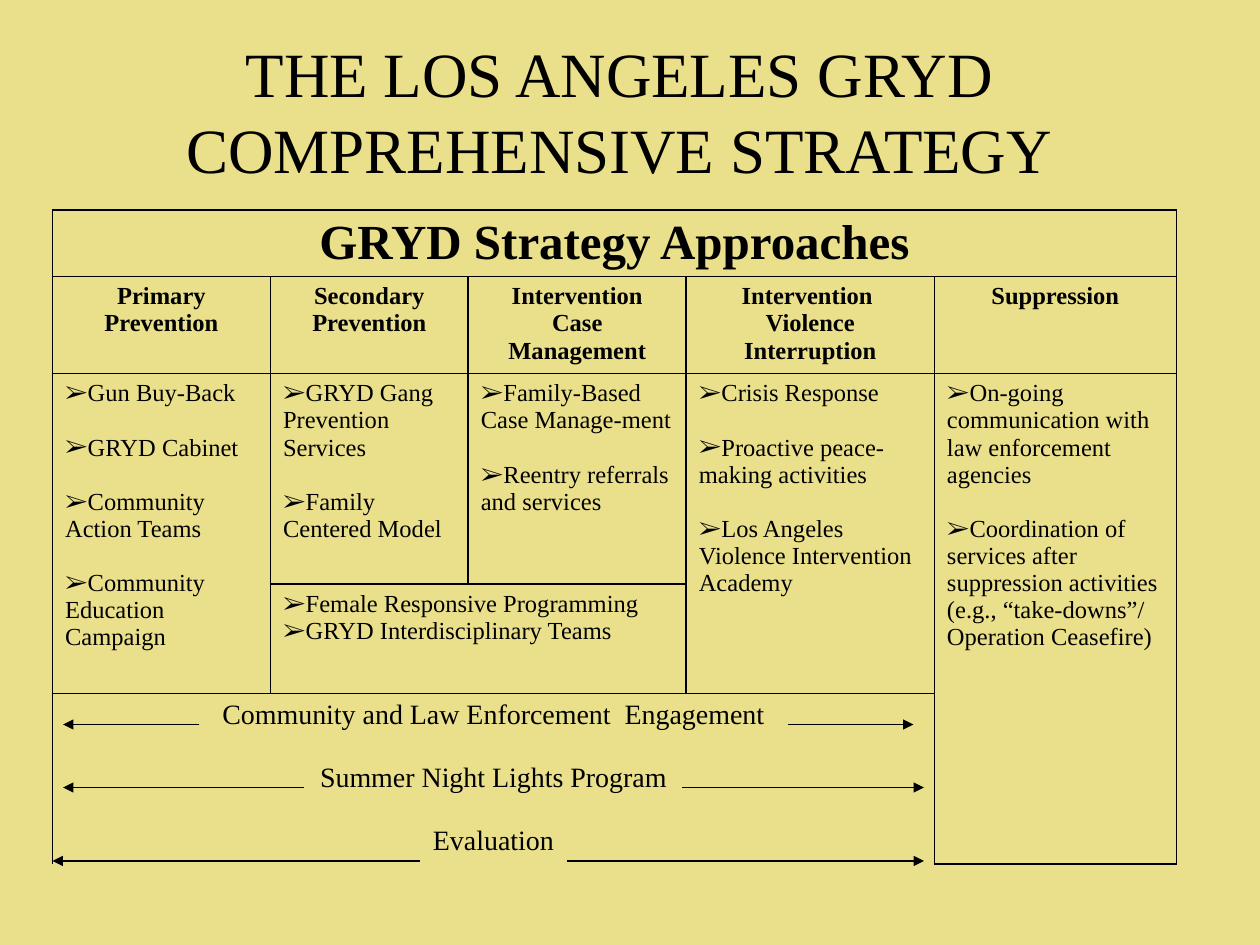
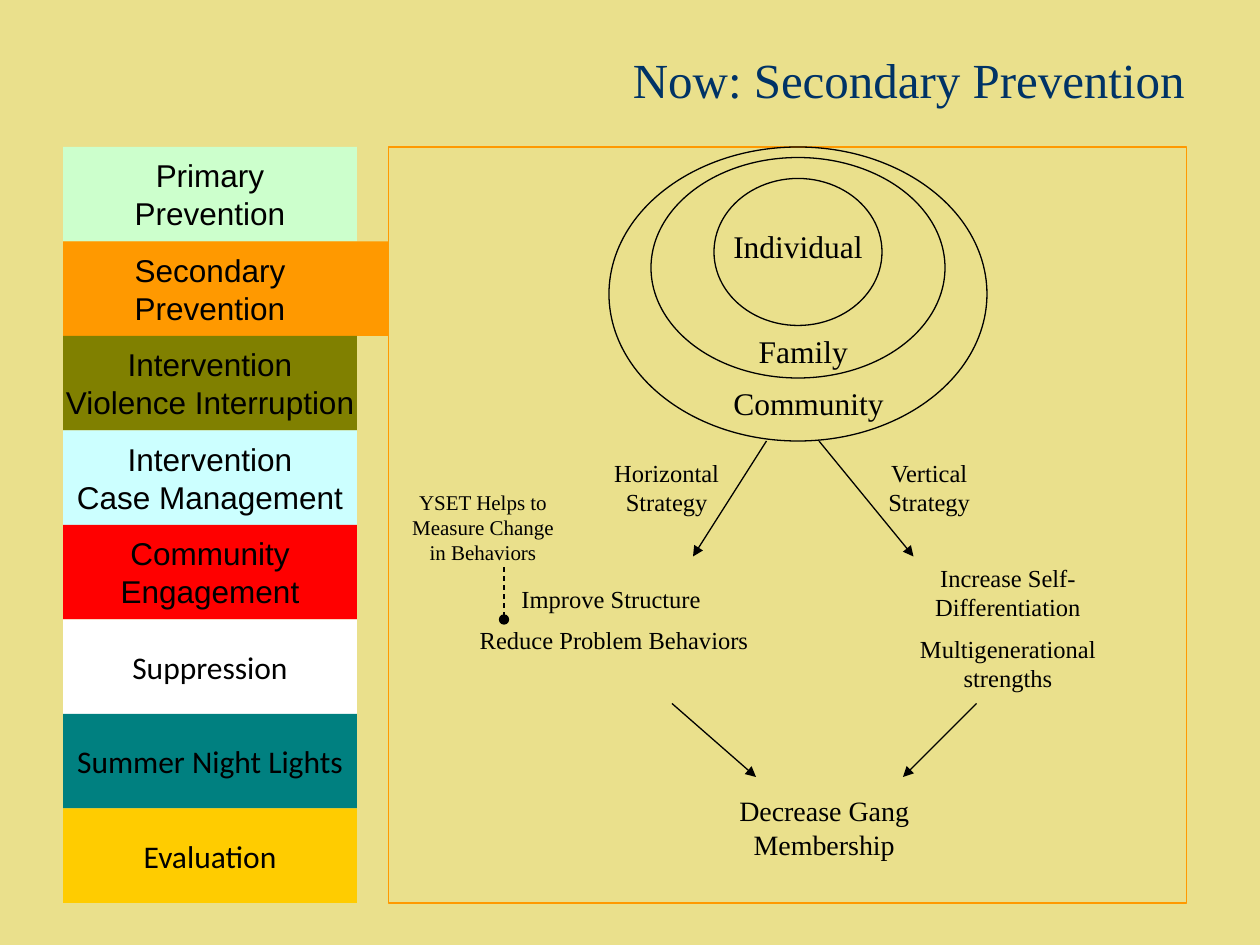
import pptx
import pptx.dml.color
import pptx.enum.dml
import pptx.enum.shapes
import pptx.enum.text
import pptx.oxml
import pptx.oxml.ns
import pptx.util
from lxml import etree

SHAPES = pptx.enum.shapes.MSO_SHAPE
ALIGN = pptx.enum.text.PP_ALIGN
ANCHOR = pptx.enum.text.MSO_ANCHOR
SERIF, SANS, LABEL = "Times New Roman", "Arial", "Calibri"
BACKGROUND, BLACK, NAVY, ORANGE = "EAE08C", "000000", "003366", "FF9900"
GRID_COLS, GRID_ROWS = 120, 90  # grid cells across and down the slide
CELL = pptx.util.Inches(10) / GRID_COLS

APPROACHES = [
    ["Primary Prevention"],
    ["Secondary Prevention"],
    ["Intervention", "Case Management"],
    ["Intervention ", "Violence Interruption"],
    ["Suppression"],
]
# row, column, last row, last column, items
ACTIVITIES = [
    (2, 0, 3, 0, ["Gun Buy-Back", "GRYD Cabinet", "Community Action Teams",
                  "Community Education Campaign"]),
    (2, 1, 2, 1, ["GRYD Gang Prevention Services", "Family Centered Model"]),
    (2, 2, 2, 2, ["Family-Based Case Manage-ment", "Reentry referrals and services"]),
    (2, 3, 3, 3, ["Crisis Response", "Proactive peace-making activities",
                  "Los Angeles Violence Intervention Academy"]),
    (2, 4, 4, 4, ["On-going communication with law enforcement agencies",
                  "Coordination of services after suppression activities "
                  "(e.g., “take-downs”/ Operation Ceasefire)"]),
]
SHARED_TEAMS = ["Female Responsive Programming", "GRYD Interdisciplinary Teams"]
CITYWIDE = ["Community and Law Enforcement  Engagement",
            "Summer Night Lights Program", "Evaluation"]
# y, then the outer and inner end of the left arrow, inner and outer end of the right
CITYWIDE_ARROWS = [(49, 1, 14, 70, 82), (55, 1, 24, 60, 83), (62, 0, 35, 49, 83)]

STRATEGIES = [
    (["Primary", "Prevention"], "CCFFCC", SANS),
    (["Secondary", "Prevention"], ORANGE, SANS),
    (["Intervention", "Violence Interruption"], "808000", SANS),
    (["Intervention", "Case Management"], "CCFFFF", SANS),
    (["Community", "Engagement"], "FF0000", SANS),
    (["Suppression"], "FFFFFF", LABEL),
    (["Summer Night Lights"], "008080", LABEL),
    (["Evaluation"], "FFCC00", LABEL),
]
CIRCLES = [(31, 3, 16, 14), (25, 1, 28, 21), (21, 0, 36, 28)]
# x, y, width, height, size, lines
MODEL_LABELS = [
    (31, 7, 16, 5, 18, ["Individual"]),
    (32, 17, 15, 5, 18, ["Family"]),
    (30, 22, 20, 5, 18, ["Community"]),
    (44, 29, 15, 7, 14, ["Vertical Strategy"]),
    (19, 29, 15, 7, 14, ["Horizontal Strategy"]),
    (46, 39, 26, 14, 14, ["Increase Self-Differentiation", "Multigenerational strengths"]),
    (7, 41, 29, 8, 14, ["Improve Structure ", "Reduce Problem Behaviors"]),
    (1, 32, 16, 8, 12, ["YSET Helps to Measure Change in Behaviors"]),
    (30, 61, 23, 8, 16, ["Decrease Gang Membership"]),
]
MODEL_ARROWS = [(41, 28, 50, 39), (36, 28, 29, 39), (27, 53, 35, 60), (56, 53, 49, 60)]
MEASURE_LINK = (11, 40, 11, 45)


def rgb(hex_color):
    return pptx.dml.color.RGBColor.from_string(hex_color)


def grid(*cells):
    return [round(n * CELL) for n in cells]


def write(tf, lines, size, font=SERIF, color=BLACK, bold=False,
          align=ALIGN.CENTER, gap=0, bullet=None):
    """Put one paragraph per line, with gap points between paragraphs."""
    for i, line in enumerate(lines):
        p = tf.add_paragraph() if i else tf.paragraphs[0]
        p.alignment = align
        p.space_before = pptx.util.Pt(gap if i else 0)
        if bullet:
            pPr = p._p.get_or_add_pPr()
            pPr.set("marL", "0")
            pPr.set("indent", "0")
            etree.SubElement(pPr, pptx.oxml.ns.qn("a:buFont"), typeface=font)
            etree.SubElement(pPr, pptx.oxml.ns.qn("a:buChar"), char=bullet)
        r = p.add_run()
        r.text = line
        r.font.size = pptx.util.Pt(size)
        r.font.name = font
        r.font.bold = bold
        r.font.color.rgb = rgb(color)


def add_text(s, box, lines, size, anchor=ANCHOR.TOP, **style):
    tf = s.shapes.add_textbox(*grid(*box)).text_frame
    tf.word_wrap = True
    tf.vertical_anchor = anchor
    write(tf, lines, size, **style)


def add_block(s, kind, box, fill=None, line=None):
    sp = s.shapes.add_shape(kind, *grid(*box))
    sp.shadow.inherit = False
    if fill:
        sp.fill.solid()
        sp.fill.fore_color.rgb = rgb(fill)
    else:
        sp.fill.background()
    if line:
        sp.line.color.rgb = rgb(line)
        sp.line.width = pptx.util.Pt(0.75)
    else:
        sp.line.fill.background()
    return sp


def add_line(s, origin, ends, tip="triangle", dashed=False):
    x, y = origin
    x1, y1, x2, y2 = ends
    cn = s.shapes.add_connector(pptx.enum.shapes.MSO_CONNECTOR.STRAIGHT,
                                *grid(x + x1, y + y1, x + x2, y + y2))
    cn.line.color.rgb = rgb(BLACK)
    cn.line.width = pptx.util.Pt(0.75)
    if dashed:
        cn.line.dash_style = pptx.enum.dml.MSO_LINE.DASH
    spPr = cn._element.spPr
    etree.SubElement(spPr.find(pptx.oxml.ns.qn("a:ln")),
                     pptx.oxml.ns.qn("a:tailEnd"), type=tip)
    etree.SubElement(spPr, pptx.oxml.ns.qn("a:effectLst"))


def add_titled_slide(prs, title, box, size, **style):
    s = prs.slides.add_slide(prs.slide_layouts[6])
    s.background.fill.solid()
    s.background.fill.fore_color.rgb = rgb(BACKGROUND)
    add_text(s, box, [title], size, anchor=ANCHOR.MIDDLE, **style)
    return s


def style_cell(cell, open_bottom):
    tcPr = cell._tc.get_or_add_tcPr()
    for side in ("lnL", "lnR", "lnT", "lnB"):
        ln = etree.SubElement(tcPr, pptx.oxml.ns.qn("a:" + side), w="12700")
        if side == "lnB" and open_bottom:
            etree.SubElement(ln, pptx.oxml.ns.qn("a:noFill"))
        else:
            fill = etree.SubElement(ln, pptx.oxml.ns.qn("a:solidFill"))
            etree.SubElement(fill, pptx.oxml.ns.qn("a:srgbClr"), val=BLACK)
    cell.fill.background()
    cell.margin_bottom = 0


def add_approaches_table(s, box):
    widths, heights = [1.73, 1.57, 1.73, 1.97, 1.92], [0.53, 0.77, 1.67, 0.87, 1.32]
    table = s.shapes.add_table(len(heights), len(widths), *grid(*box)).table
    table.first_row = table.horz_banding = False
    for column, width in zip(table.columns, widths):
        column.width = pptx.util.Inches(width)
    for row, height in zip(table.rows, heights):
        row.height = pptx.util.Inches(height)
    for r in range(len(heights)):
        for c in range(len(widths)):
            style_cell(table.cell(r, c), open_bottom=(r == 4 and c < 4))

    def fill_span(r1, c1, r2, c2, lines, size, **style):
        cell = table.cell(r1, c1)
        if (r1, c1) != (r2, c2):
            cell.merge(table.cell(r2, c2))
        write(cell.text_frame, lines, size, **style)

    bullets = dict(align=ALIGN.LEFT, bullet="➢")
    fill_span(0, 0, 0, 4, ["GRYD Strategy Approaches"], 28, bold=True)
    for c, heading in enumerate(APPROACHES):
        fill_span(1, c, 1, c, heading, 14, bold=True)
    for *span, items in ACTIVITIES:
        fill_span(*span, items, 14, gap=15.5, **bullets)
    fill_span(3, 1, 3, 2, SHARED_TEAMS, 14, **bullets)
    fill_span(4, 0, 4, 3, CITYWIDE, 16, gap=18)


def add_citywide_arrows(s, box):
    for y, left_out, left_in, right_in, right_out in CITYWIDE_ARROWS:
        add_line(s, box[:2], (left_in, y, left_out, y))
        add_line(s, box[:2], (right_in, y, right_out, y))


def add_strategy_list(s, box, current, reach):
    """Stack the strategies; a tab of width reach leads out of the current one."""
    x, y, w, h = box
    step = h / len(STRATEGIES)
    for i, (lines, color, font) in enumerate(STRATEGIES):
        top = y + i * step
        sp = add_block(s, SHAPES.RECTANGLE, (x, top, w, step), color)
        sp.text_frame.word_wrap = False
        sp.text_frame.vertical_anchor = ANCHOR.MIDDLE
        write(sp.text_frame, lines, 18, font=font)
        if i == current:
            add_block(s, SHAPES.RECTANGLE, (x + w, top, reach, step), color)


def add_prevention_model(s, box):
    x, y = box[:2]
    add_block(s, SHAPES.RECTANGLE, box, line=ORANGE)
    for dx, dy, w, h in CIRCLES:
        add_block(s, SHAPES.OVAL, (x + dx, y + dy, w, h), line=BLACK)
    for dx, dy, w, h, size, lines in MODEL_LABELS:
        add_text(s, (x + dx, y + dy, w, h), lines, size, gap=size / 2)
    for ends in MODEL_ARROWS:
        add_line(s, (x, y), ends)
    add_line(s, (x, y), MEASURE_LINK, tip="oval", dashed=True)


def build_strategy_slide(prs):
    s = add_titled_slide(prs, "THE LOS ANGELES GRYD COMPREHENSIVE STRATEGY",
                         (5, 3, 108, 15), 36)
    box = (5, 20, 107, 62)
    add_approaches_table(s, box)
    add_citywide_arrows(s, box)


def build_prevention_slide(prs):
    s = add_titled_slide(prs, "Now: Secondary Prevention", (6, 3, 108, 9), 28,
                         color=NAVY, align=ALIGN.RIGHT)
    add_prevention_model(s, (37, 14, 76, 72))
    add_strategy_list(s, (6, 14, 28, 72), current=1, reach=3)


def main():
    prs = pptx.Presentation()
    prs.slide_width, prs.slide_height = grid(GRID_COLS, GRID_ROWS)
    build_strategy_slide(prs)
    build_prevention_slide(prs)
    prs.save("out.pptx")


if __name__ == "__main__":
    main()
